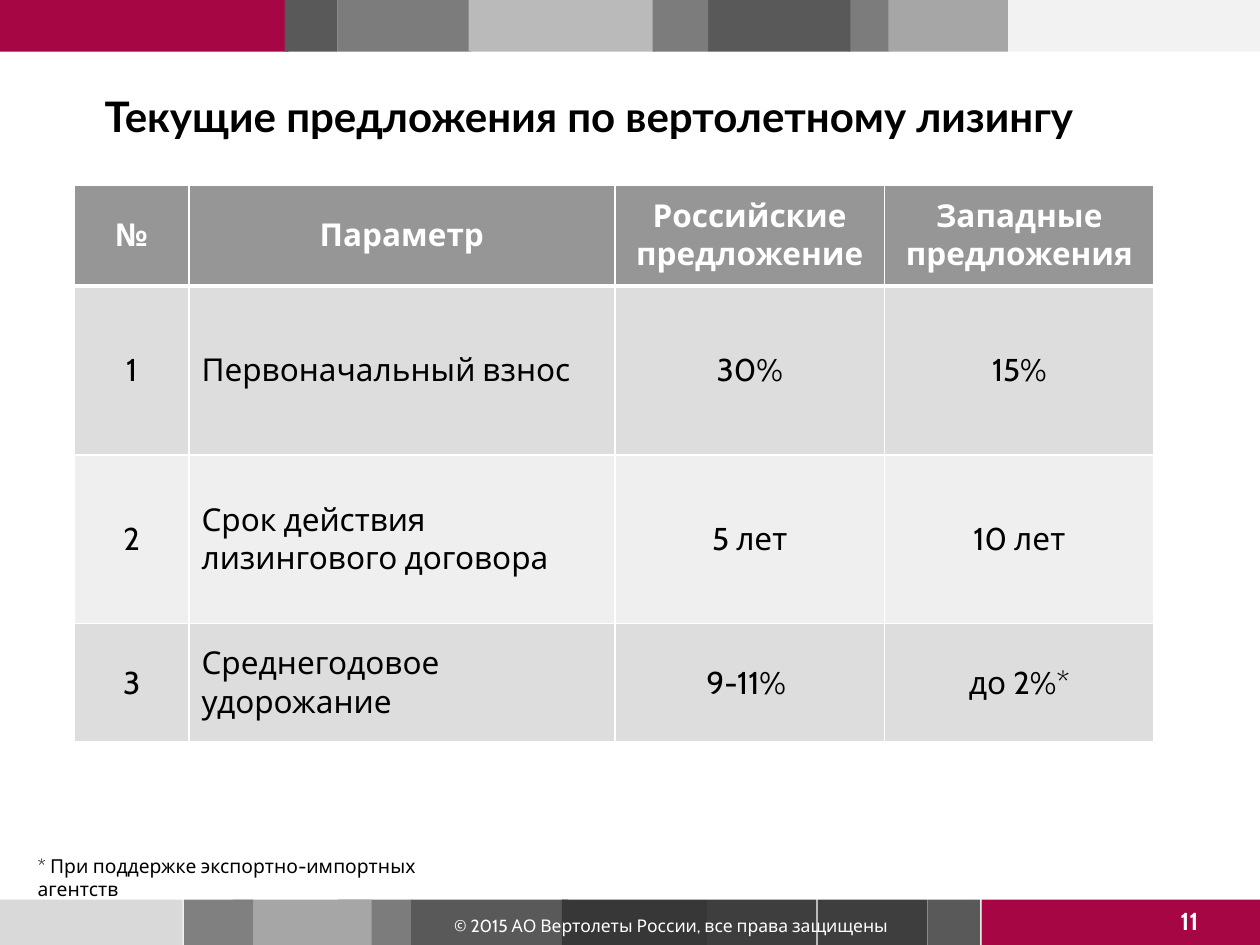
"""Build a slide that compares helicopter leasing offers in a table."""
from lxml import etree
from pptx import Presentation
from pptx import util as u
from pptx.dml import color
from pptx.enum import shapes, text
from pptx.oxml import ns

HUES = {
    "red": "A60643", "black": "000000", "white": "FFFFFF", "pale": "F2F2F2",
    "mist": "D9D9D9", "silver": "BABABA", "ash": "A6A6A6", "steel": "808080",
    "gray": "7C7C7C", "dark": "595959", "coal": "3E3E3E", "ink": "373737",
    "head": "969696", "odd": "DDDDDD", "even": "EFEFEF",
}
TOP = [
    (575.3, 144.7, "pale"), (-0.7, 165.6, "red"), (162.7, 30.2, "dark"),
    (193, 76.3, "gray"), (267.8, 106.6, "silver"), (485.3, 23, "gray"),
    (507.6, 68.4, "ash"), (404.6, 81.4, "dark"), (373, 31.7, "gray"),
]
BASE = [
    (234.7, 90, "dark"), (467.3, 62.6, "coal"), (-0.7, 105.1, "mist"),
    (560.9, 159.1, "red"), (529.9, 30.2, "dark"), (403.9, 62.6, "coal"),
    (193, 41.8, "gray"), (133.2, 79.2, "ash"), (321.1, 82.8, "ink"),
    (105.1, 39.6, "steel"),
]
COLS = [65.5, 243.4, 154.1, 154.1]
ROWS = [57.6, 96.5, 96.5, 67.7]
CELLS = [
    ["№", "Параметр", "Российские предложение", "Западные предложения"],
    ["1", "Первоначальный взнос", "30%", "15%"],
    ["2", "Срок действия лизингового договора", "5 лет", "10 лет"],
    ["3", "Среднегодовое удорожание", "9-11% ", "до 2%*"],
]
MID = text.PP_ALIGN.CENTER
LEFT = text.PP_ALIGN.LEFT


def rgb(hue):
    """Return the named colour."""
    return color.RGBColor.from_string(HUES[hue])


def style(frame, words, size, hue, bold=False, align=LEFT, face="Cabin"):
    """Put words in a text frame and format them."""
    frame.text = words
    frame.word_wrap = True
    para = frame.paragraphs[0]
    para.alignment = align
    for run in para.runs:
        run.font.name = face
        run.font.size = u.Pt(size)
        run.font.bold = bold
        run.font.color.rgb = rgb(hue)


def add_band(slide, bars, top):
    """Draw a row of coloured bars."""
    for left, width, hue in bars:
        bar = slide.shapes.add_shape(
            shapes.MSO_SHAPE.RECTANGLE,
            u.Pt(left), u.Pt(top), u.Pt(width), u.Pt(29.5))
        bar.shadow.inherit = False
        bar.fill.solid()
        bar.fill.fore_color.rgb = rgb(hue)
        bar.line.fill.background()


def add_label(slide, box, words, size, hue, **look):
    """Add a text box and return its frame."""
    frame = slide.shapes.add_textbox(*map(u.Pt, box)).text_frame
    style(frame, words, size, hue, **look)
    return frame


def add_edge(cell, side, width):
    """Add a white border to one side of a cell."""
    props = cell._tc.get_or_add_tcPr()
    line = etree.SubElement(props, ns.qn(f"a:ln{side}"), w=str(u.Pt(width)))
    fill = etree.SubElement(line, ns.qn("a:solidFill"))
    etree.SubElement(fill, ns.qn("a:srgbClr"), val=HUES["white"])


def fill_cell(cell, words, row, col):
    """Set the text, borders and fill of a table cell."""
    head = row == 0
    style(cell.text_frame, words, 18, "white" if head else "black",
          bold=head, align=LEFT if col == 1 and not head else MID)
    cell.vertical_anchor = text.MSO_ANCHOR.MIDDLE
    for side in "LRTB":
        thick = (head and side == "B") or (row == 1 and side == "T")
        add_edge(cell, side, 3 if thick else 1)
    cell.fill.solid()
    cell.fill.fore_color.rgb = rgb("head" if head else "odd" if row % 2 else "even")


def add_grid(slide):
    """Add the table of offers."""
    grid = slide.shapes.add_table(
        len(ROWS), len(COLS), u.Pt(42.5), u.Pt(105.8),
        u.Pt(sum(COLS)), u.Pt(sum(ROWS))).table
    grid.horz_banding = False
    for col, width in zip(grid.columns, COLS):
        col.width = u.Pt(width)
    for row, height in zip(grid.rows, ROWS):
        row.height = u.Pt(height)
    for row, line in enumerate(CELLS):
        for col, words in enumerate(line):
            fill_cell(grid.cell(row, col), words, row, col)


def main():
    """Build and save the slide."""
    deck = Presentation()
    deck.slide_width, deck.slide_height = u.Pt(720), u.Pt(540)
    slide = deck.slides.add_slide(deck.slide_layouts[6])
    add_band(slide, TOP, 0)
    add_band(slide, BASE, 514)
    title = add_label(slide, (59.8, 51.8, 600, 37.4),
                      "Текущие предложения по вертолетному лизингу",
                      24, "black", bold=True, face="Lato")
    title.margin_left = title.margin_right = 0
    title.margin_top = title.margin_bottom = 0
    add_label(slide, (664.6, 514, 30.2, 28.8), "11", 14, "white",
              bold=True, align=MID)
    add_label(slide, (241.2, 519.1, 284.4, 20.9),
              "© 2015 АО Вертолеты России, все права защищены",
              10, "white", align=MID)
    add_grid(slide)
    add_label(slide, (14.4, 484.6, 264.2, 20.9),
              "* При поддержке экспортно-импортных агентств", 11, "black")
    deck.save("out.pptx")


if __name__ == "__main__":
    main()
